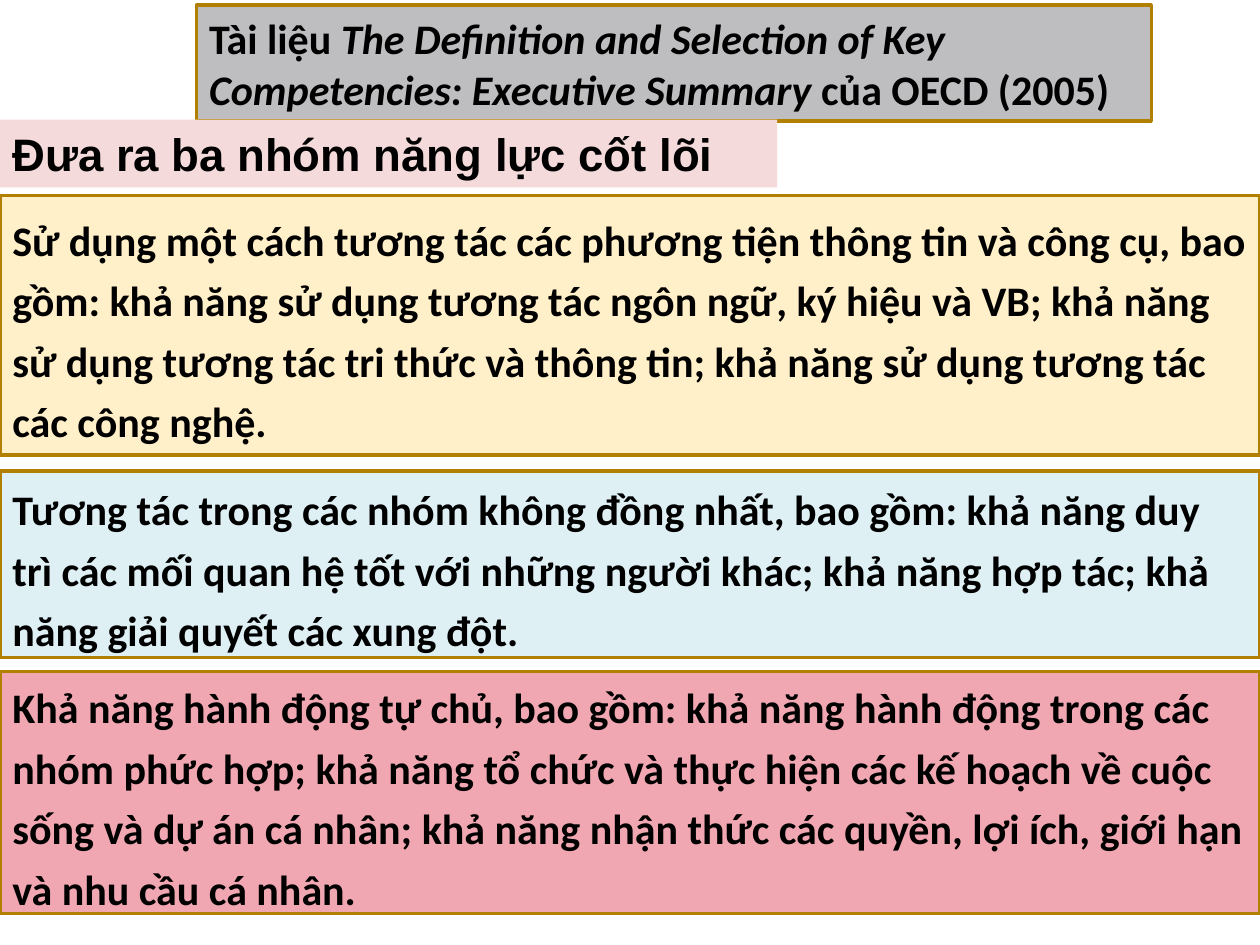
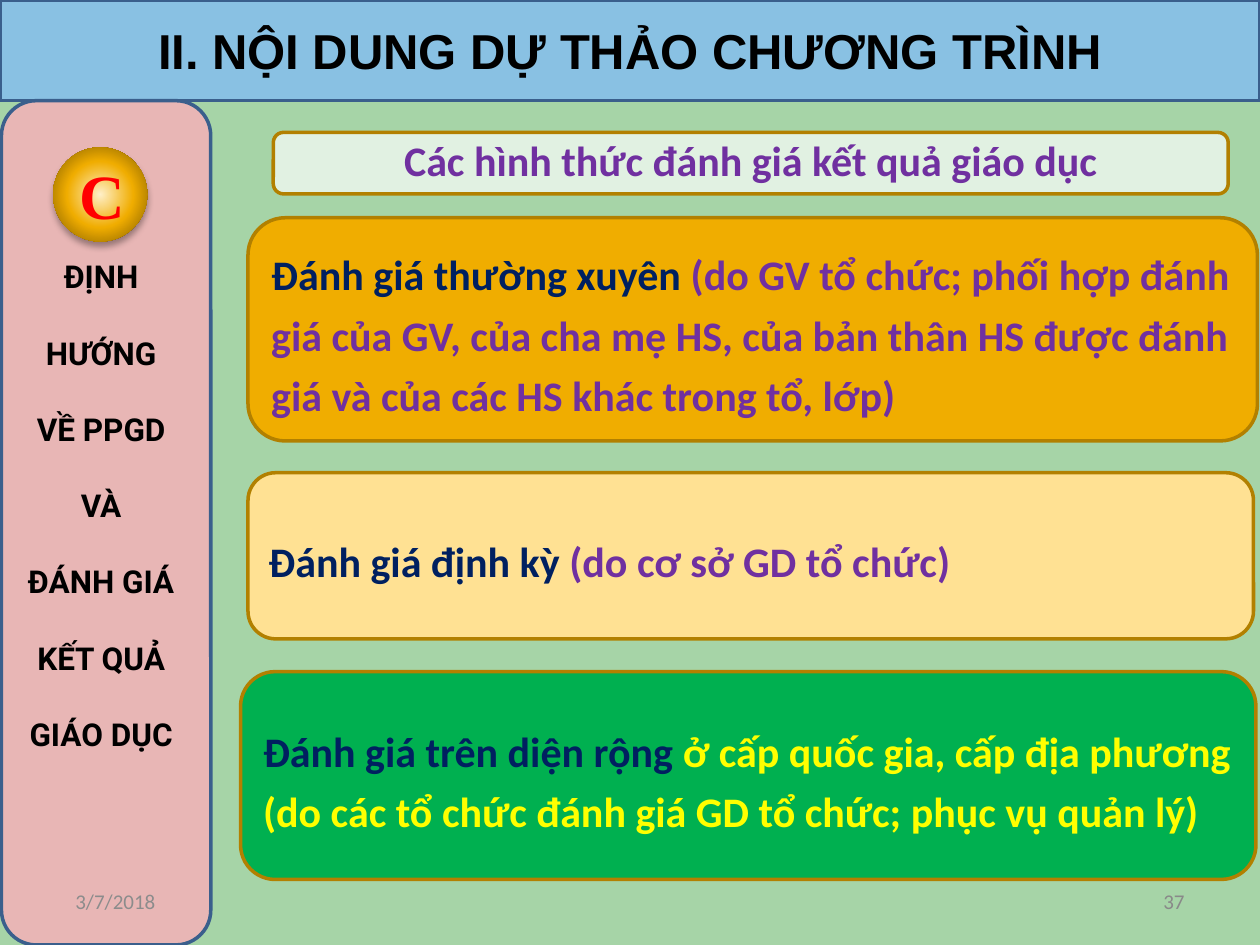
from lxml import etree
from pptx import Presentation
from pptx.dml.color import RGBColor
from pptx.enum.shapes import MSO_SHAPE
from pptx.enum.text import MSO_ANCHOR, MSO_AUTO_SIZE, PP_ALIGN
from pptx.oxml import parse_xml
from pptx.oxml.ns import nsdecls, qn
from pptx.util import Cm, Pt

RECT, ROUNDED, OVAL = MSO_SHAPE.RECTANGLE, MSO_SHAPE.ROUNDED_RECTANGLE, MSO_SHAPE.OVAL
LEFT, CENTER, RIGHT = PP_ALIGN.LEFT, PP_ALIGN.CENTER, PP_ALIGN.RIGHT
TOP, MIDDLE = MSO_ANCHOR.TOP, MSO_ANCHOR.MIDDLE
TITLE_ONLY = 5
WIDTH, HEIGHT = 25.4, 19.05

COLORS = {
    "black": "000000", "navy": "002060", "purple": "7030A0", "yellow": "FFFF00",
    "red": "FF0000", "gold line": "B28000", "blue line": "3A5F8C",
    "grey": "BEBEC1", "cream": "FFF0C9", "ice": "DFF0F5", "rose": "F0A7B1",
    "blush": "F4DADA", "sky": "89C1E3", "pink": "E8B6B5", "leaf": "A6D4A7",
    "mint": "E1F1E2", "gold": "F0AD00", "sand": "FFE193", "green": "00B050",
    "bronze": "785600", "date": "8C8C8C", "number": "898989",
}


def rgb(name):
    return RGBColor.from_string(COLORS[name])


def write(shape, paragraphs, size=24, font="Calibri", color="black", bold=True,
          align=LEFT, spacing=None, gap=0, anchor=MIDDLE):
    """Fill a shape with paragraphs, each a string or a list of (text, run format)."""
    frame = shape.text_frame
    frame.word_wrap = True
    frame.auto_size = MSO_AUTO_SIZE.NONE
    frame.vertical_anchor = anchor
    for index, content in enumerate(paragraphs):
        paragraph = frame.add_paragraph() if index else frame.paragraphs[0]
        paragraph.alignment = align
        if spacing:
            paragraph.line_spacing = spacing
        if index and gap:
            paragraph.space_before = Pt(gap)
        runs = [(content, {})] if isinstance(content, str) else content
        for text, style in runs:
            run = paragraph.add_run()
            run.text = text
            run.font.name = font
            run.font.size = Pt(size)
            run.font.bold = bold
            run.font.italic = style.get("italic", False)
            run.font.color.rgb = rgb(style.get("color", color))


class Deck:
    def __init__(self):
        self.presentation = Presentation()
        self.presentation.slide_width = Cm(WIDTH)
        self.presentation.slide_height = Cm(HEIGHT)
        self.slide = None

    def new_slide(self, background=None):
        layout = self.presentation.slide_layouts[TITLE_ONLY]
        self.slide = self.presentation.slides.add_slide(layout)
        if background:
            self.slide.background.fill.solid()
            self.slide.background.fill.fore_color.rgb = rgb(background)

    def paint(self, shape, fill, line):
        shape.fill.solid()
        shape.fill.fore_color.rgb = rgb(fill)
        if line:
            shape.line.color.rgb = rgb(line)
            shape.line.width = Pt(2)
        else:
            shape.line.fill.background()

    def title(self, area, text, fill, line, **style):
        title = self.slide.shapes.title
        title.left, title.top, title.width, title.height = map(Cm, area)
        self.paint(title, fill, line)
        write(title, [text], **style)

    def panel(self, area, paragraphs, fill, line="gold line", kind=ROUNDED, **style):
        panel = self.slide.shapes.add_shape(kind, *map(Cm, area))
        panel.shadow.inherit = False
        self.paint(panel, fill, line)
        write(panel, paragraphs, **style)
        return panel

    def footer(self, left, text, color, align):
        box = self.slide.shapes.add_textbox(Cm(left), Cm(17.65), Cm(5.92), Cm(1.02))
        write(box, [text], size=12, color=color, bold=False, align=align)

    def badge(self, area, letter):
        """Draw a round letter mark with a radial gradient and a soft shadow."""
        badge = self.panel(area, [letter], "gold", line=None, kind=OVAL, size=36,
                           font="Times New Roman", color="red", align=CENTER)
        stops = "".join(
            f'<a:gs pos="{position}"><a:srgbClr val="{COLORS[name]}"/></a:gs>'
            for position, name in ((0, "cream"), (50000, "gold"), (100000, "bronze")))
        properties = badge.element.spPr
        properties.replace(properties.find(qn("a:solidFill")), parse_xml(
            f'<a:gradFill {nsdecls("a")}><a:gsLst>{stops}</a:gsLst><a:path path="circle">'
            '<a:fillToRect l="50000" t="50000" r="50000" b="50000"/></a:path></a:gradFill>'))
        shadow = etree.SubElement(
            properties.find(qn("a:effectLst")), qn("a:outerShdw"),
            blurRad=str(Pt(4)), dist=str(Pt(3)), dir="5400000", rotWithShape="0")
        shade = etree.SubElement(shadow, qn("a:srgbClr"), val=COLORS["black"])
        etree.SubElement(shade, qn("a:alpha"), val="35000")


def core_competencies(deck):
    deck.new_slide()
    deck.title((3.96, 0.1, 19.25, 2.34), [
        ("Tài liệu", {}),
        (" The Definition and Selection of Key Competencies: Executive Summary ",
         {"italic": True}),
        ("của OECD (2005)", {})], "grey", "gold line")
    groups = (
        (3.94, 5.23, "cream",
         "Sử dụng một cách tương tác các phương tiện thông tin và công cụ, bao gồm: "
         "khả năng sử dụng tương tác ngôn ngữ, ký hiệu và VB; khả năng sử dụng tương "
         "tác tri thức và thông tin; khả năng sử dụng tương tác các công nghệ."),
        (9.5, 3.76, "ice",
         "Tương tác trong các nhóm không đồng nhất, bao gồm: khả năng duy trì các mối "
         "quan hệ tốt với những người khác; khả năng hợp tác; khả năng giải quyết các "
         "xung đột."),
        (13.54, 4.88, "rose",
         "Khả năng hành động tự chủ, bao gồm: khả năng hành động trong các nhóm phức "
         "hợp; khả năng tổ chức và thực hiện các kế hoạch về cuộc sống và dự án cá "
         "nhân; khả năng nhận thức các quyền, lợi ích, giới hạn và nhu cầu cá nhân."),
    )
    for top, height, fill, text in groups:
        deck.panel((0, top, WIDTH, height), [text], fill, kind=RECT, spacing=1.2)
    deck.panel((0, 2.41, 15.67, 1.37), ["Đưa ra ba nhóm năng lực cốt lõi"], "blush",
               line=None, kind=RECT, size=26, font="Arial", anchor=TOP)


def assessment_forms(deck):
    deck.new_slide("leaf")
    deck.title((0, 0, WIDTH, 2.03), "II. NỘI DUNG DỰ THẢO CHƯƠNG TRÌNH", "sky",
               "blue line", size=28, font="Arial", align=CENTER)
    sidebar = deck.panel(
        (0.03, 2.03, 4.22, 17.02),
        ["ĐỊNH", "HƯỚNG", "VỀ PPGD", "VÀ", "ĐÁNH GIÁ", "KẾT QUẢ", "GIÁO DỤC"],
        "pink", line="blue line", size=18, font="Roboto", align=CENTER, gap=22,
        anchor=TOP)
    sidebar.text_frame.margin_left = 0
    sidebar.text_frame.margin_right = Cm(0.2)
    sidebar.text_frame.margin_top = Cm(2.95)

    deck.panel((5.51, 2.67, 19.25, 1.24), ["Các hình thức đánh giá kết quả giáo dục"],
               "mint", color="purple", align=CENTER, spacing=0.9)
    forms = (
        ((5, 4.39, 20.35, 4.5), "gold", "purple", "Đánh giá thường xuyên ",
         "(do GV tổ chức; phối hợp đánh giá của GV, của cha mẹ HS, của bản thân HS "
         "được đánh giá và của các HS khác trong tổ, lớp)"),
        ((5, 9.53, 20.27, 3.35), "sand", "purple", "Đánh giá định kỳ ",
         "(do cơ sở GD tổ chức)"),
        ((4.85, 13.54, 20.47, 4.19), "green", "yellow", "Đánh giá trên diện rộng ",
         "ở cấp quốc gia, cấp địa phương (do các tổ chức đánh giá GD tổ chức; phục vụ "
         "quản lý)"),
    )
    for area, fill, detail_color, form, detail in forms:
        deck.panel(area, [[(form, {"color": "navy"}), (detail, {"color": detail_color})]],
                   fill, spacing=1.2)
    deck.footer(1.27, "3/7/2018", "date", LEFT)
    deck.footer(18.21, "37", "number", RIGHT)
    deck.badge((1.07, 2.97, 1.9, 1.9), "C")


def main():
    deck = Deck()
    core_competencies(deck)
    assessment_forms(deck)
    deck.presentation.save("out.pptx")


if __name__ == "__main__":
    main()
